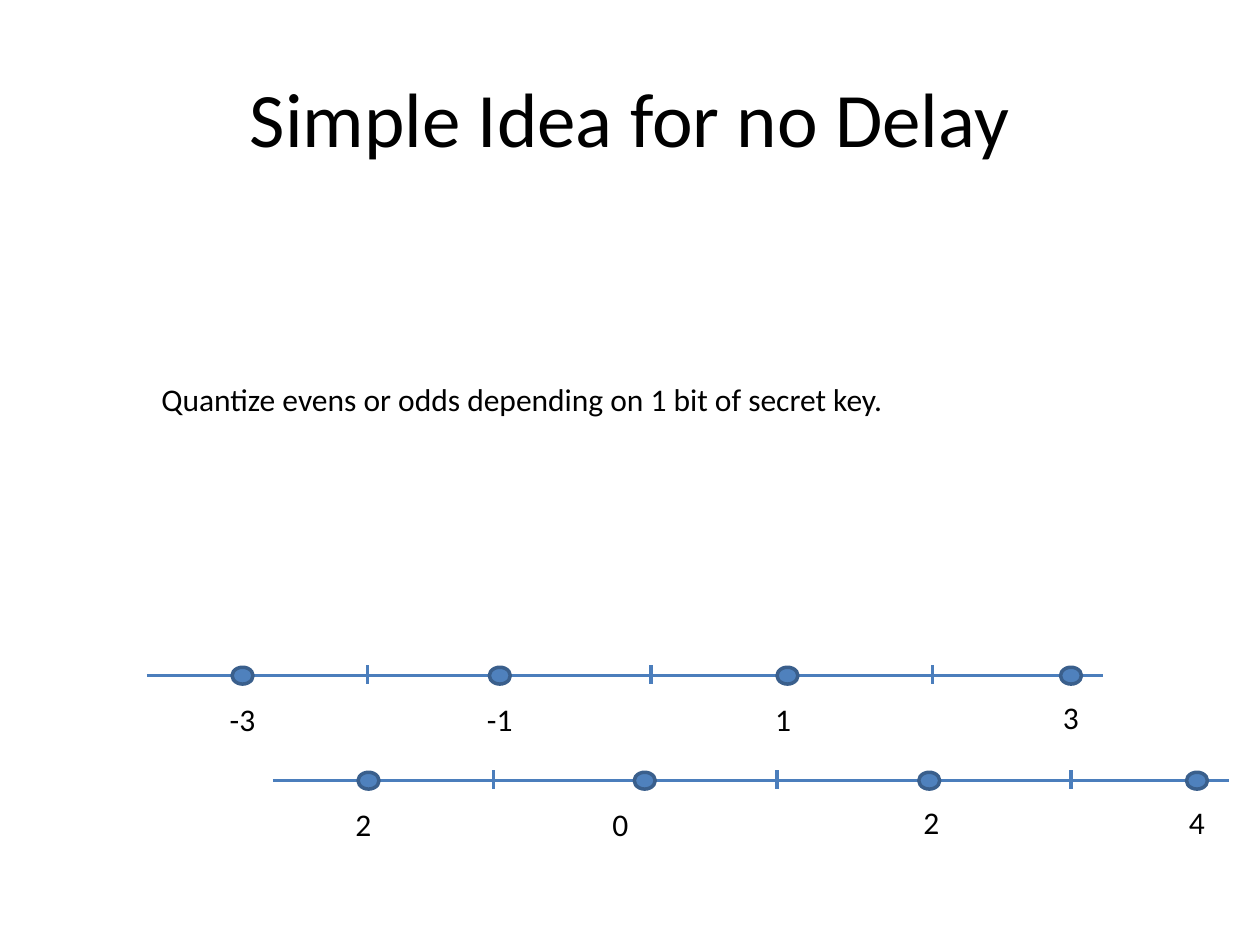
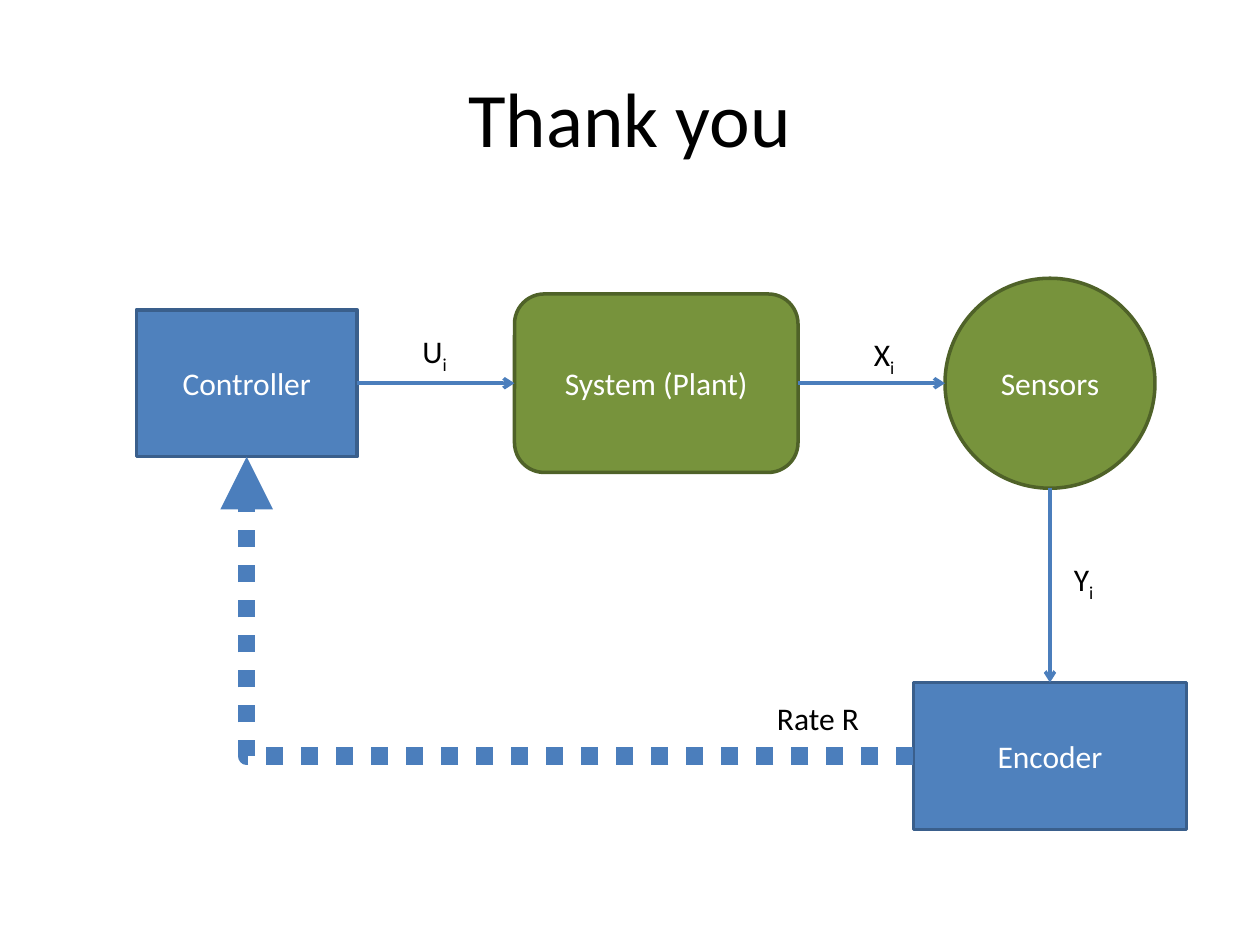
from lxml import etree
from pptx import Presentation
from pptx import util as u
from pptx.dml.color import RGBColor
from pptx.enum import dml, shapes, text
from pptx.oxml.ns import qn

COLOURS = {
    "ink": "000000",
    "paper": "FFFFFF",
    "blue": "4F81BD",
    "blue_edge": "3A5F8C",
    "green": "77933C",
    "green_edge": "4F6228",
    "line": "4B7EBC",
}
FONT = "Calibri"
COLUMNS, ROWS = 120, 90
CENTRE, LEFT = text.PP_ALIGN.CENTER, text.PP_ALIGN.LEFT


class Deck:
    def __init__(self):
        self.prs = Presentation()
        self.prs.slide_width = u.Inches(10)
        self.prs.slide_height = u.Inches(7.5)
        self.column = self.prs.slide_width / COLUMNS
        self.row = self.prs.slide_height / ROWS

    def x(self, columns):
        return u.Emu(round(columns * self.column))

    def y(self, rows):
        return u.Emu(round(rows * self.row))

    def area(self, left, top, width, height):
        return self.x(left), self.y(top), self.x(width), self.y(height)

    def colour(self, name):
        return RGBColor.from_string(COLOURS[name])

    def add_slide(self, title):
        self.slide = self.prs.slides.add_slide(self.prs.slide_layouts[6])
        self.text(title, 6, 3.6, 108, 15, size=44)

    def set_text(self, frame, content, colour, size=18, align=CENTRE):
        frame.text = content
        paragraph = frame.paragraphs[0]
        paragraph.alignment = align
        for run in paragraph.runs:
            self.style(run, colour, size)
        return paragraph

    def style(self, run, colour, size):
        run.font.name = FONT
        run.font.size = u.Pt(size)
        run.font.color.rgb = self.colour(colour)

    def text(self, content, left, top, width, height, size=18, align=CENTRE, wrap=True):
        frame = self.slide.shapes.add_textbox(*self.area(left, top, width, height)).text_frame
        frame.word_wrap = wrap
        frame.vertical_anchor = text.MSO_ANCHOR.MIDDLE
        return self.set_text(frame, content, "ink", size, align)

    def label(self, content, centre, top, subscript="", width=5):
        paragraph = self.text(content, centre - width / 2, top, width, 4.8, wrap=False)
        if subscript:
            run = paragraph.add_run()
            run.text = subscript
            self.style(run, "ink", 18)
            run._r.get_or_add_rPr().set("baseline", "-25000")

    def shape(self, kind, left, top, width, height, fill="blue", content=""):
        shape = self.slide.shapes.add_shape(kind, *self.area(left, top, width, height))
        shape.shadow.inherit = False
        shape.fill.solid()
        shape.fill.fore_color.rgb = self.colour(fill)
        shape.line.color.rgb = self.colour(fill + "_edge")
        shape.line.width = u.Pt(2)
        if content:
            shape.text_frame.vertical_anchor = text.MSO_ANCHOR.MIDDLE
            self.set_text(shape.text_frame, content, "paper")
        return shape

    def connector(self, start, end, head=None, width=2, kind=shapes.MSO_CONNECTOR.STRAIGHT):
        link = self.slide.shapes.add_connector(
            kind, self.x(start[0]), self.y(start[1]), self.x(end[0]), self.y(end[1]))
        link.line.color.rgb = self.colour("line")
        link.line.width = u.Pt(width)
        if head:
            etree.SubElement(link.line._get_or_add_ln(), qn("a:tailEnd"), type=head)
        etree.SubElement(link._element.spPr, qn("a:effectLst"))
        return link

    def corner(self, start, end, head, width):
        link = self.connector(start, end, head, width, shapes.MSO_CONNECTOR.ELBOW)
        link._element.spPr.find(qn("a:prstGeom")).set("prst", "bentConnector2")
        link.line.dash_style = dml.MSO_LINE.ROUND_DOT
        return link

    def number_line(self, left, row, points, ticks):
        self.connector((left, row), (left + 91, row))
        for number, dot, centre, drop in points:
            self.shape(shapes.MSO_SHAPE.OVAL, dot - 1, row - 0.8, 2, 1.6)
            self.label(number, centre, row + drop)
        for tick in ticks:
            self.connector((tick, row - 1), (tick, row + 0.8))


def quantizer_slide(deck):
    deck.add_slide("Simple Idea for no Delay")
    odds = [("-3", 23.1, 23.1, 1.75), ("-1", 47.6, 47.6, 1.75),
            ("1", 75, 74.6, 1.75), ("3", 102, 102, 1.5)]
    evens = [("2", 35.1, 34.6, 1.75), ("0", 61.4, 59.1, 1.75),
             ("2", 88.5, 88.7, 1.5), ("4", 114, 114, 1.5)]
    deck.number_line(14, 64.35, odds, (35, 62, 88.8))
    deck.number_line(26, 74.35, evens, (47, 74, 102))
    deck.text("Quantize evens or odds depending on 1 bit of secret key.",
              14.2, 35.6, 91, 4.8, align=LEFT)


def control_loop_slide(deck):
    deck.add_slide("Thank you")
    kinds = shapes.MSO_SHAPE
    controller = deck.shape(kinds.RECTANGLE, 13, 29.5, 21, 14, content="Controller")
    encoder = deck.shape(kinds.RECTANGLE, 87, 65, 26, 14, content="Encoder")
    plant = deck.shape(kinds.ROUNDED_RECTANGLE, 49, 28, 27, 17, "green", "System (Plant)")
    deck.shape(kinds.OVAL, 90, 26.5, 20, 20, "green", "Sensors")

    control = deck.connector((34, 36.5), (49, 36.5), "arrow")
    control.begin_connect(controller, 3)
    control.end_connect(plant, 1)
    state = deck.connector((76, 36.5), (90, 36.5), "arrow")
    state.begin_connect(plant, 3)
    measurement = deck.connector((100, 46.5), (100, 65), "arrow")
    measurement.end_connect(encoder, 0)
    feedback = deck.corner((87, 72), (23.5, 43.5), "triangle", 10)
    feedback.begin_connect(encoder, 1)
    feedback.end_connect(controller, 2)

    deck.label("Rate R", 77.9, 66, width=10.3)
    deck.label("U", 41.4, 31.3, "i")
    deck.label("X", 84.2, 31.6, "i")
    deck.label("Y", 103.2, 53, "i")


def main():
    deck = Deck()
    quantizer_slide(deck)
    control_loop_slide(deck)
    deck.prs.save("out.pptx")


if __name__ == "__main__":
    main()
